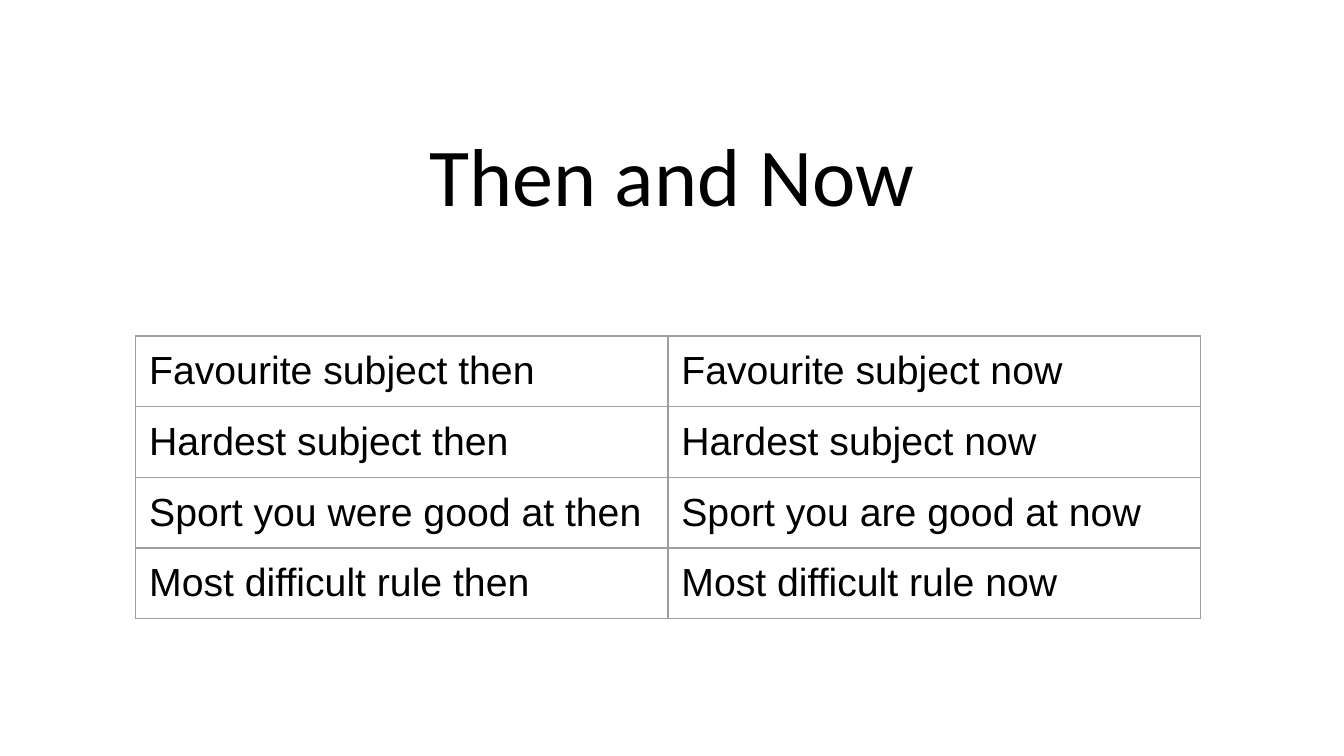
from dataclasses import dataclass

from lxml import etree
from pptx import Presentation
from pptx.dml.color import RGBColor
from pptx.enum.text import MSO_ANCHOR, PP_ALIGN
from pptx.oxml.ns import qn
from pptx.util import Inches, Pt

CENTER = PP_ALIGN.CENTER
LEFT = PP_ALIGN.LEFT
MIDDLE = MSO_ANCHOR.MIDDLE
TOP = MSO_ANCHOR.TOP
TITLE_ONLY = 5


@dataclass(frozen=True)
class Theme:
    text: RGBColor = RGBColor(0x00, 0x00, 0x00)
    border: str = "9E9E9E"
    border_width: Pt = Pt(0.75)
    title_font: str = "Calibri"
    title_size: Pt = Pt(44)
    table_font: str = "Arial"
    table_size: Pt = Pt(21)


THEME = Theme()

TOPICS = [
    ("Favourite subject then", "Favourite subject now"),
    ("Hardest subject then", "Hardest subject now"),
    ("Sport you were good at then", "Sport you are good at now"),
    ("Most difficult rule then", "Most difficult rule now"),
]


def style_paragraph(p, font, size, align):
    p.alignment = align
    p.font.name = font
    p.font.size = size
    p.font.color.rgb = THEME.text


def add_borders(cell):
    tc_pr = cell._tc.get_or_add_tcPr()
    for i, side in enumerate(("a:lnL", "a:lnR", "a:lnT", "a:lnB")):
        ln = etree.Element(qn(side), w=str(THEME.border_width))
        fill = etree.SubElement(ln, qn("a:solidFill"))
        etree.SubElement(fill, qn("a:srgbClr"), val=THEME.border)
        tc_pr.insert(i, ln)


def place_title(slide, text, left, top, width, height):
    sp = slide.shapes.title
    sp.left, sp.top, sp.width, sp.height = left, top, width, height
    tf = sp.text_frame
    tf.text = text
    tf.word_wrap = True
    tf.vertical_anchor = MIDDLE
    style_paragraph(tf.paragraphs[0], THEME.title_font, THEME.title_size, CENTER)


def place_table(slide, rows, left, top, width, height):
    table = slide.shapes.add_table(
        len(rows), len(rows[0]), left, top, width, height
    ).table
    table.first_row = False
    table.horz_banding = False
    for r, row in enumerate(rows):
        for c, text in enumerate(row):
            cell = table.cell(r, c)
            cell.text = text
            cell.vertical_anchor = TOP
            cell.margin_left = cell.margin_right = Inches(0.1)
            cell.margin_top = cell.margin_bottom = Inches(0.1)
            cell.fill.background()
            add_borders(cell)
            p = cell.text_frame.paragraphs[0]
            style_paragraph(p, THEME.table_font, THEME.table_size, LEFT)


def main():
    prs = Presentation()
    prs.slide_width = Inches(10)
    prs.slide_height = prs.slide_width * 9 // 16
    slide = prs.slides.add_slide(prs.slide_layouts[TITLE_ONLY])
    place_title(
        slide, "Then and Now", Inches(0.5), Inches(0.82), Inches(9), Inches(0.94)
    )
    place_table(
        slide, TOPICS, Inches(1.01), Inches(2.5), Inches(7.92), Inches(2.1)
    )
    prs.save("out.pptx")


if __name__ == "__main__":
    main()
